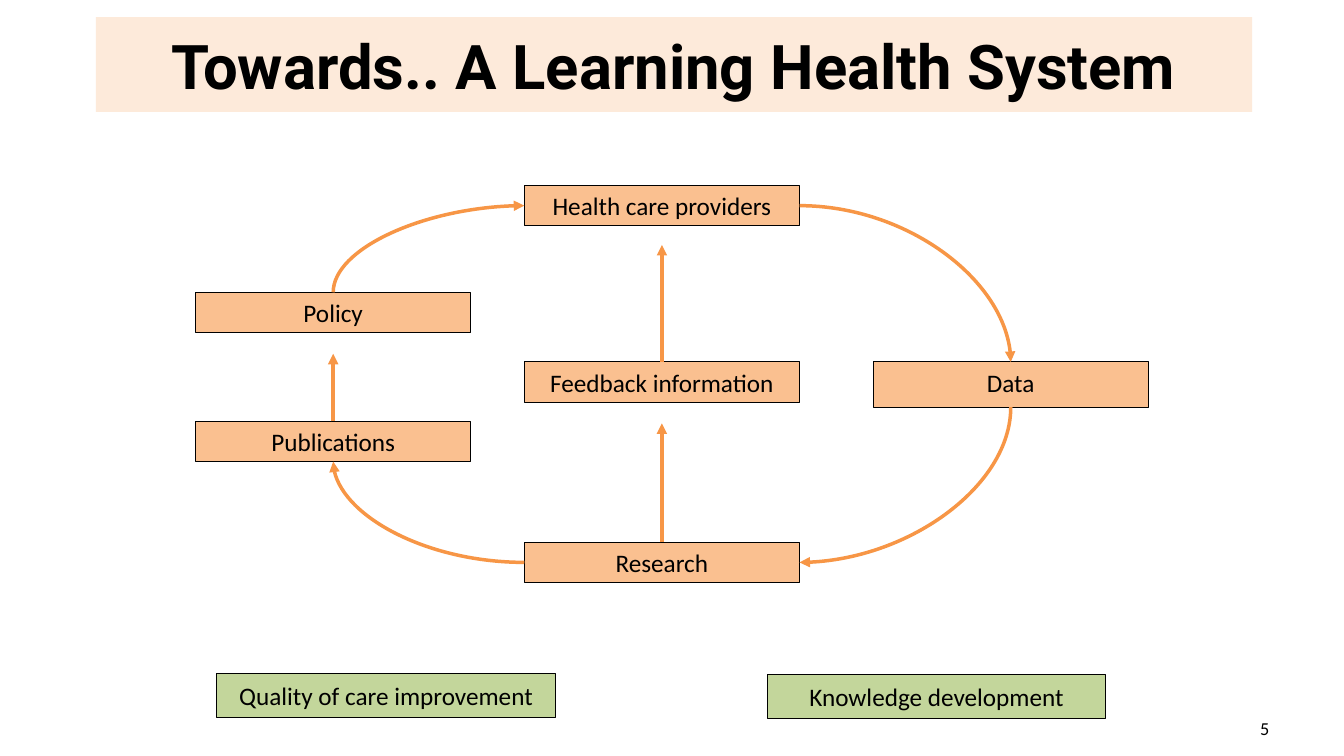
from lxml import etree
from pptx import Presentation
from pptx.dml.color import RGBColor
from pptx.enum.shapes import MSO_CONNECTOR, MSO_SHAPE
from pptx.enum.text import MSO_ANCHOR, MSO_AUTO_SIZE, PP_ALIGN
from pptx.oxml.ns import qn
from pptx.util import Pt

PX = 9144  # 100 px to the inch
RECT = MSO_SHAPE.RECTANGLE
LINE, CURVE = MSO_CONNECTOR.STRAIGHT, MSO_CONNECTOR.CURVE
TOP, MIDDLE = MSO_ANCHOR.TOP, MSO_ANCHOR.MIDDLE
CENTER, RIGHT = PP_ALIGN.CENTER, PP_ALIGN.RIGHT
SITE_TOP, SITE_LEFT, SITE_BASE, SITE_RIGHT = range(4)

PEACH, ORANGE, GREEN = "FAC090", "F79646", "C3D69B"
WIDE, HIGH = 273, 40
LEFT_X, MID_X, DATA_X = 194, 520, 866
TOP_Y, FEED_Y, BASE_Y = 184, 359, 538

STEPS = {
    "Health care providers": (MID_X, TOP_Y, HIGH),
    "Data": (DATA_X, FEED_Y, 45),
    "Research": (MID_X, BASE_Y, HIGH),
    "Publications": (LEFT_X, 418, HIGH),
    "Policy": (LEFT_X, 290, HIGH),
    "Feedback information": (MID_X, FEED_Y, HIGH),
}
GOALS = [
    ("Quality of care improvement", 215, 668),
    ("Knowledge development", 761, 669),
]
# Side box, its site, middle box, its site, end that has the arrowhead
BENDS = [
    ("Data", SITE_TOP, "Health care providers", SITE_RIGHT, "tailEnd"),
    ("Data", SITE_BASE, "Research", SITE_RIGHT, "headEnd"),
    ("Publications", SITE_BASE, "Research", SITE_LEFT, "tailEnd"),
    ("Policy", SITE_TOP, "Health care providers", SITE_LEFT, "headEnd"),
]
# Start box and length
RISES = [("Feedback information", 116), ("Research", 118), ("Publications", 67)]


def px(*sizes):
    return [size * PX for size in sizes]


def color(code):
    return RGBColor.from_string(code)


def write(shape, text, size, font="Calibri", bold=False, align=CENTER,
          anchor=TOP, pads=(13, 7)):
    frame = shape.text_frame
    frame.word_wrap = True
    frame.auto_size = MSO_AUTO_SIZE.NONE
    frame.vertical_anchor = anchor
    frame.margin_left = frame.margin_right = pads[0] * PX
    frame.margin_top = frame.margin_bottom = pads[1] * PX
    frame.text = text
    para = frame.paragraphs[0]
    para.alignment = align
    para.font.name = font
    para.font.size = Pt(size)
    para.font.bold = bold
    para.font.color.rgb = color("000000")


def add_title(slide, text):
    title = slide.shapes.title
    title.left, title.top, title.width, title.height = px(95, 17, 1147, 94)
    title.fill.solid()
    title.fill.fore_color.rgb = color("FDEADA")
    write(title, text, 44, "Roboto", bold=True, anchor=MIDDLE)


def add_box(slide, text, spot, fill, pads):
    box = slide.shapes.add_shape(RECT, *px(*spot))
    box.shadow.inherit = False
    box.fill.solid()
    box.fill.fore_color.rgb = color(fill)
    box.line.color.rgb = color("000000")
    box.line.width = Pt(0.75)
    write(box, text, 18, pads=pads)
    return box


def style(link, end):
    """Colour a connector and put a triangle on the given end."""
    link.line.color.rgb = color(ORANGE)
    link.line.width = Pt(2.5)
    etree.SubElement(link.line._get_or_add_ln(), qn(f"a:{end}"), type="triangle")
    etree.SubElement(link._element.spPr, qn("a:effectLst"))


def add_bend(slide, side, side_site, mid, mid_site, end):
    """Draw a quarter curve that leaves the middle box sideways."""
    link = slide.shapes.add_connector(CURVE, 0, 0, 0, 0)
    link.begin_connect(mid, mid_site)
    link.end_connect(side, side_site)
    link._element.spPr.find(qn("a:prstGeom")).set("prst", "curvedConnector2")
    style(link, end)


def add_rise(slide, box, length):
    """Draw a straight arrow up from the top of a box."""
    x = box.left + box.width // 2
    link = slide.shapes.add_connector(LINE, x, box.top, x, box.top - length * PX)
    style(link, "tailEnd")


def main():
    deck = Presentation()
    deck.slide_width, deck.slide_height = px(1333, 750)
    slide = deck.slides.add_slide(deck.slide_layouts[5])
    add_title(slide, "Towards.. A Learning Health System")

    boxes = {}
    for name, (x, y, high) in STEPS.items():
        boxes[name] = add_box(slide, name, (x, y, WIDE, high), PEACH, (10, 5))
    for side, side_site, mid, mid_site, end in BENDS:
        add_bend(slide, boxes[side], side_site, boxes[mid], mid_site, end)
    for name, length in RISES:
        add_rise(slide, boxes[name], length)
    for text, x, y in GOALS:
        add_box(slide, text, (x, y, 336, 44), GREEN, (13, 7))

    number = slide.shapes.add_textbox(*px(980, 702, 292, 40))
    write(number, "5", 13, align=RIGHT, anchor=MIDDLE)
    deck.save("out.pptx")


if __name__ == "__main__":
    main()
